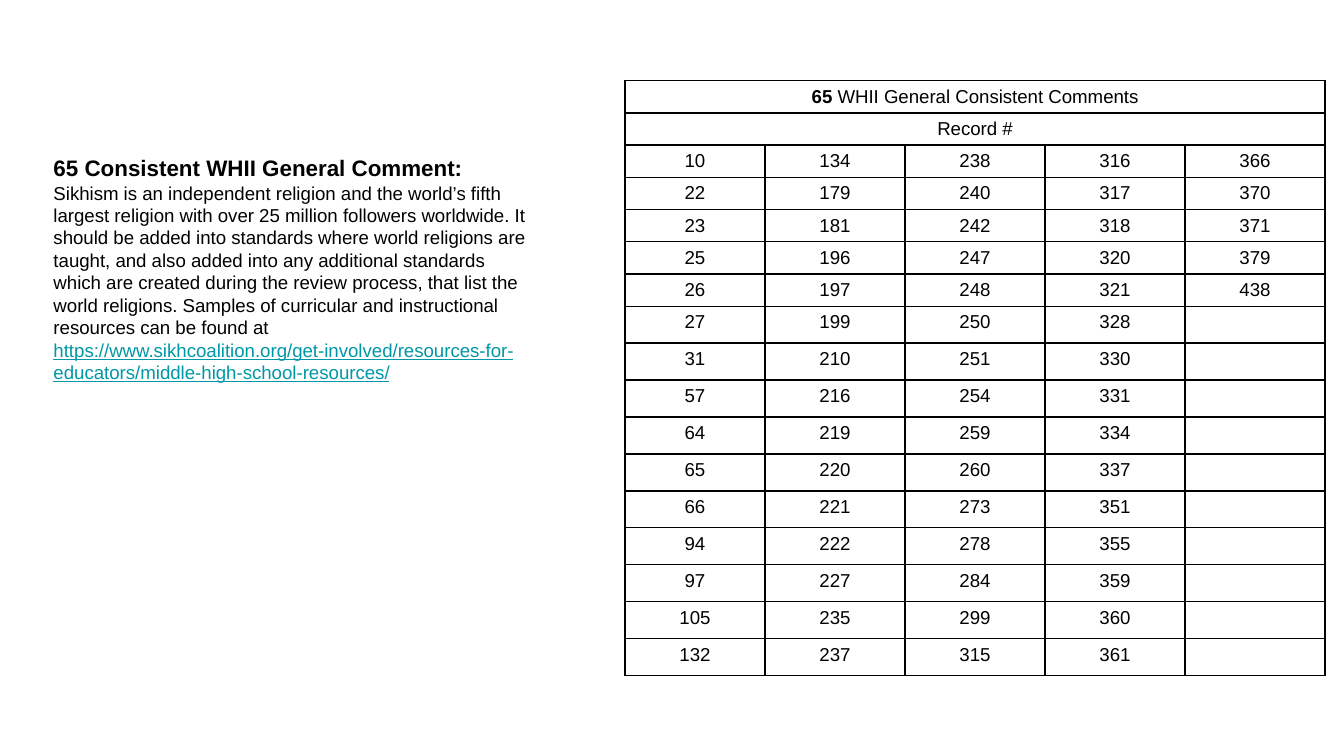
from lxml.etree import SubElement
from pptx import Presentation
from pptx.dml.color import RGBColor as RGB
from pptx.enum.text import PP_ALIGN as Align
from pptx.oxml.ns import qn
from pptx.util import Inches, Pt

BLACK, TEAL = "000000", "0097A7"
COLS, DEPTH, HEADS = 5, 15, 2
SIZE = 10

RECORDS = [
    10, 22, 23, 25, 26, 27, 31, 57, 64, 65, 66, 94, 97, 105, 132,
    134, 179, 181, 196, 197, 199, 210, 216, 219, 220, 221, 222, 227, 235, 237,
    238, 240, 242, 247, 248, 250, 251, 254, 259, 260, 273, 278, 284, 299, 315,
    316, 317, 318, 320, 321, 328, 330, 331, 334, 337, 351, 355, 359, 360, 361,
    366, 370, 371, 379, 438,
]
COMMENT = (
    "Sikhism is an independent religion and the world’s fifth largest religion "
    "with over 25 million followers worldwide. It should be added into standards "
    "where world religions are taught, and also added into any additional "
    "standards which are created during the review process, that list the world "
    "religions. Samples of curricular and instructional resources can be found at "
)
LINK = (
    "https://www.sikhcoalition.org/get-involved/"
    "resources-for-educators/middle-high-school-resources/"
)


def paint(font, color):
    font.color.rgb = RGB.from_string(color)


def write(para, text, size=SIZE, color=BLACK, bold=False, line=False):
    run = para.add_run()
    run.text = text
    font = run.font
    font.name, font.size = "Arial", Pt(size)
    font.bold, font.underline = bold, line
    paint(font, color)


def border(cell):
    props = cell._tc.get_or_add_tcPr()
    for side in ("lnL", "lnR", "lnT", "lnB"):
        edge = SubElement(props, qn(f"a:{side}"), w=str(Pt(0.83)))
        fill = SubElement(edge, qn("a:solidFill"))
        SubElement(fill, qn("a:srgbClr"), val=BLACK)


def format_cell(cell):
    """Clear the cell's fill, draw its edges and set its text layout."""
    cell.margin_left = cell.margin_right = Inches(0.03)
    cell.margin_top = cell.margin_bottom = Inches(0.02)
    border(cell)
    cell.fill.background()
    para = cell.text_frame.paragraphs[0]
    para.alignment, para.line_spacing = Align.CENTER, 1.15
    return para


def add_comment(slide):
    box = slide.shapes.add_textbox(
        Inches(0.3), Inches(1.05), Inches(3.76), Inches(2.84))
    frame = box.text_frame
    frame.word_wrap = True
    frame.margin_left = frame.margin_right = Inches(0.1)
    frame.margin_top = frame.margin_bottom = Inches(0.1)
    write(frame.paragraphs[0], "65 Consistent WHII General Comment:",
          size=12, bold=True)
    body = frame.add_paragraph()
    write(body, COMMENT)
    write(body, LINK, color=TEAL, line=True)


def add_records(slide):
    """Fill the record grid column by column below two merged head rows."""
    table = slide.shapes.add_table(
        HEADS + DEPTH, COLS,
        Inches(4.65), Inches(0.6), Inches(5.21), Inches(4.43)).table
    table.first_row = table.horz_banding = False
    full = HEADS + len(RECORDS) % DEPTH
    for num, row in enumerate(table.rows):
        row.height = Inches(0.24) if num < full else Inches(5.5) // 20
        paras = [format_cell(cell) for cell in row.cells]
        if num < HEADS:
            table.cell(num, 0).merge(table.cell(num, COLS - 1))
            continue
        for col, para in enumerate(paras):
            item = col * DEPTH + num - HEADS
            if item < len(RECORDS):
                write(para, str(RECORDS[item]))
            else:
                SubElement(para._p, qn("a:endParaRPr"), sz=str(SIZE * 100))
    title, label = (table.cell(num, 0).text_frame.paragraphs[0]
                    for num in range(HEADS))
    write(title, "65 ", bold=True)
    write(title, "WHII General Consistent Comments")
    write(label, "Record #")


def main():
    deck = Presentation()
    deck.slide_width = Inches(10)
    deck.slide_height = deck.slide_width * 9 // 16
    slide = deck.slides.add_slide(deck.slide_layouts[6])
    add_comment(slide)
    add_records(slide)
    deck.save("out.pptx")


if __name__ == "__main__":
    main()
